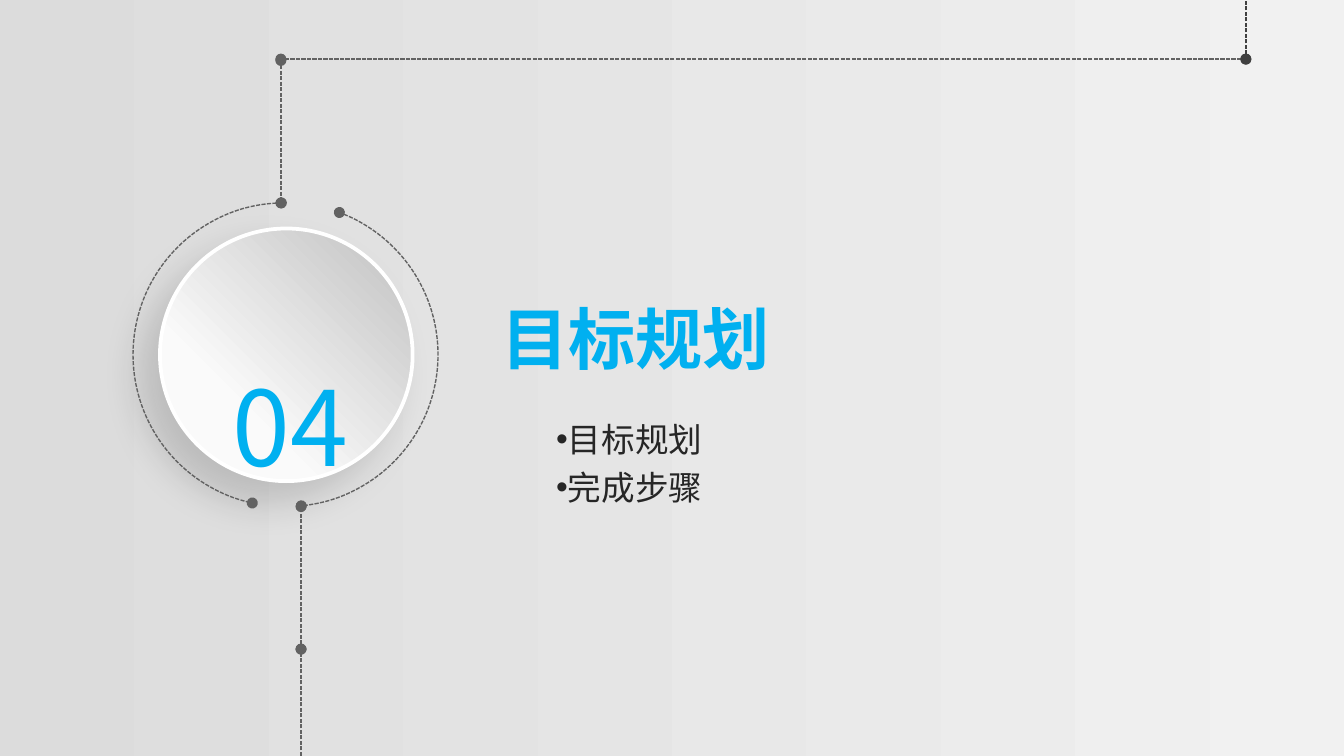
from pptx import Presentation
from pptx import util as u
from pptx.dml.color import RGBColor
from pptx.enum import dml, shapes, text
from pptx.oxml import parse_xml
from pptx.oxml.ns import nsdecls, qn
from lxml import etree

COLORS = {
    "accent": "00B0F0", "body": "262626", "line": "626262", "edge": "404040",
    "white": "FFFFFF", "bg_left": "DCDCDC", "bg_right": "F1F1F1",
    "disc_dark": "BFBFBF", "disc_light": "FAFAFA",
}
FONT = "Noto Sans CJK SC"
W = u.Inches(10)
H = W * 9 // 16
CELL = W // 100
ROWS = H / CELL


def rgb(name):
    return RGBColor.from_string(COLORS[name])


def cells(*values):
    return [round(v * CELL) for v in values]


def set_gradient(fill, stops, angle):
    fill.gradient()
    fill.gradient_angle = angle
    for stop, (pos, color) in zip(fill.gradient_stops, stops):
        stop.position = pos
        stop.color.rgb = rgb(color)


def write_text(sp, lines, size, color, bold=False, align=text.PP_ALIGN.LEFT,
               spacing=1.2, bullet=None, baseline=None):
    tf = sp.text_frame
    tf.word_wrap = False
    tf.auto_size = text.MSO_AUTO_SIZE.SHAPE_TO_FIT_TEXT
    tf.vertical_anchor = text.MSO_ANCHOR.MIDDLE
    for i, line in enumerate(lines):
        p = tf.add_paragraph() if i else tf.paragraphs[0]
        p.alignment, p.line_spacing = align, spacing
        p.space_before = p.space_after = u.Pt(0)
        if bullet:
            pPr = p._p.get_or_add_pPr()
            pPr.set("marL", "0")
            pPr.set("indent", str(-2 * CELL))
            etree.SubElement(pPr, qn("a:buFont")).set("typeface", "Arial")
            etree.SubElement(pPr, qn("a:buChar")).set("char", bullet)
        r = p.add_run()
        r.text = line
        r.font.size, r.font.bold, r.font.name = u.Pt(size), bold, FONT
        r.font.color.rgb = rgb(color)
        rPr = r._r.get_or_add_rPr()
        etree.SubElement(rPr, qn("a:ea")).set("typeface", FONT)
        if baseline:
            rPr.set("baseline", str(baseline * 1000))


def style_line(sp, color="line", head=True, tail=True):
    sp.line.color.rgb = rgb(color)
    sp.line.width = u.Pt(0.75)
    sp.line.dash_style = dml.MSO_LINE.SQUARE_DOT
    ln = sp.line._get_or_add_ln()
    for tag, shown in (("a:headEnd", head), ("a:tailEnd", tail)):
        if shown:
            etree.SubElement(ln, qn(tag)).set("type", "oval")


def add_path(s, start, end, **style):
    c = s.shapes.add_connector(shapes.MSO_CONNECTOR.STRAIGHT,
                               *cells(*start), *cells(*end))
    style_line(c, **style)
    etree.SubElement(c._element.spPr, qn("a:effectLst"))


def add_arc(s, box, start, end, flip=False):
    sp = s.shapes.add_shape(shapes.MSO_SHAPE.ARC, *cells(*box))
    sp.adjustments[0], sp.adjustments[1] = start, end
    sp.fill.background()
    style_line(sp)
    sp.shadow.inherit = False
    if flip:
        sp._element.spPr.xfrm.set("flipH", "1")


def add_disc(s, box):
    sp = s.shapes.add_shape(shapes.MSO_SHAPE.OVAL, *cells(*box))
    set_gradient(sp.fill, [(0, "disc_dark"), (0.7, "disc_light")], 225)
    sp.line.color.rgb = rgb("white")
    sp.line.width = u.Pt(2)
    sp._element.spPr.append(parse_xml(
        f'<a:effectLst {nsdecls("a")}><a:outerShdw blurRad="{u.Pt(20)}" '
        f'dist="{u.Pt(15)}" dir="{135 * 60000}" algn="tr" rotWithShape="0">'
        '<a:srgbClr val="000000"><a:alpha val="15000"/></a:srgbClr>'
        '</a:outerShdw></a:effectLst>'))


def add_badge(s, box, number):
    x, y, w, h = box
    add_disc(s, (x + 2, y + 1.9, 18.8, 18.8))
    sp = s.shapes.add_textbox(*cells(x + 4.5, y + 4.2, 12.5, 15.3))
    write_text(sp, [number], 96, "accent", align=text.PP_ALIGN.RIGHT,
               spacing=1.5, baseline=12)
    add_arc(s, box, 162.8, 46.57, flip=True)
    add_arc(s, (x + 0.1, y, w, h), 174.31, 50.57)


def add_trail(s, box):
    x, y, w, h = box
    left, right, top, bottom = x + 11, 92.7, 4.4, y + h
    joint = bottom + 10.6
    add_path(s, (left, top + 0.1), (left, y))
    add_path(s, (right, top), (left, top))
    add_path(s, (x + 12.5, joint), (x + 12.5, bottom))
    add_path(s, (x + 12.5, ROWS), (x + 12.5, joint), head=False)
    add_path(s, (right, top), (right, 0), color="edge", tail=False)


def add_heading(s, box, title, points):
    x, y, w, h = box
    sp = s.shapes.title
    sp.left, sp.top, sp.width, sp.height = cells(x, y, w, 7.7)
    write_text(sp, [title], 36, "accent", bold=True)
    sp = s.shapes.add_textbox(*cells(x + 4.1, y + h - 8.3, 14.1, 8.3))
    write_text(sp, points, 18, "body", bullet="•")


def main():
    prs = Presentation()
    prs.slide_width, prs.slide_height = W, H
    s = prs.slides.add_slide(prs.slide_layouts[5])
    set_gradient(s.background.fill, [(0, "bg_left"), (1, "bg_right")], 0)
    badge = (9.9, 15.1, 22.6, 22.6)
    add_badge(s, badge, "04")
    add_trail(s, badge)
    add_heading(s, (36.3, 20.7, 22.2, 17.6), "目标规划", ["目标规划", "完成步骤"])
    prs.save("out.pptx")


if __name__ == "__main__":
    main()
